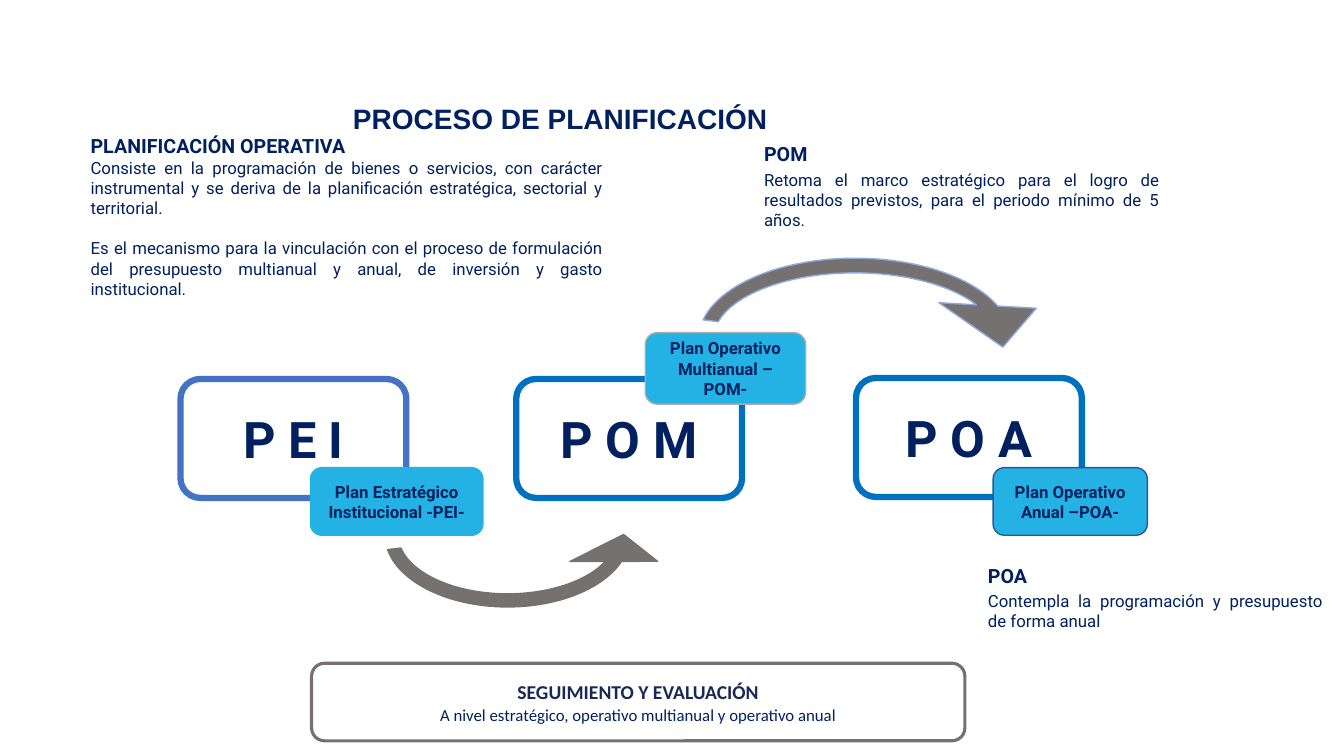
"""Build the planning process slide."""
from dataclasses import dataclass

from pptx import Presentation
from pptx.dml.color import RGBColor
from pptx.enum.shapes import MSO_SHAPE
from pptx.enum.text import MSO_ANCHOR, PP_ALIGN
from pptx.shapes.autoshape import Shape
from pptx.slide import Slide
from pptx.text.text import _Paragraph
from pptx.util import Inches, Pt

ROUNDED, ARC_ARROW = MSO_SHAPE.ROUNDED_RECTANGLE, MSO_SHAPE.CIRCULAR_ARROW
MIDDLE = MSO_ANCHOR.MIDDLE
LEFT, CENTER, JUSTIFY = PP_ALIGN.LEFT, PP_ALIGN.CENTER, PP_ALIGN.JUSTIFY
COLORS = {
    "navy": "002060", "ink": "192854", "white": "FFFFFF", "cyan": "23B2E3",
    "indigo": "4472C4", "blue": "0070C0", "silver": "AFABAB",
    "royal": "2F5597", "gray": "767171", "sky": "8FAADC",
}
Box = tuple[float, float, float, float]


@dataclass
class Line:
    text: str
    size: float = 12
    bold: bool = False
    before: float = 0
    font: str = "Roboto"
    color: str = "navy"


@dataclass
class Stage:
    acronym: str
    box: Box
    border: str
    plan: str
    plan_box: Box
    plan_border: str


@dataclass
class Arrow:
    box: Box
    head_angle: float
    border: str
    mirrored: bool = False


@dataclass
class Note:
    box: Box
    lines: list[Line]


STAGES = [
    Stage("P E I", (1.79, 3.76, 2.24, 1.18), "indigo",
          "Plan Estratégico Institucional -PEI-", (3.08, 4.64, 1.71, 0.67), "cyan"),
    Stage("P O M", (5.12, 3.76, 2.24, 1.18), "blue",
          "Plan Operativo Multianual –POM-", (6.4, 3.3, 1.59, 0.71), "silver"),
    Stage("P O A", (8.49, 3.75, 2.24, 1.18), "blue",
          "Plan Operativo Anual –POA-", (9.85, 4.64, 1.53, 0.67), "royal"),
]
ARROWS = [
    Arrow((6.52, 2.15, 3.92, 2.42), 10.41, "sky"),
    Arrow((3.45, 4.22, 3.17, 2.17), 8.52, "gray", mirrored=True),
]
NOTES = [
    Note((0.8, 1.28, 5.28, 1.55), [
        Line("PLANIFICACIÓN OPERATIVA", 14, True),
        Line("Consiste en la programación de bienes o servicios, con carácter "
             "instrumental y se deriva de la planificación estratégica, "
             "sectorial y territorial."),
        Line("Es el mecanismo para la vinculación con el proceso de formulación "
             "del presupuesto multianual y anual, de inversión y gasto "
             "institucional.", before=14.4),
    ]),
    Note((7.48, 1.36, 4.12, 0.84), [
        Line("POM", 14, True),
        Line("Retoma el marco estratégico para el logro de resultados previstos, "
             "para el periodo mínimo de 5 años.", before=3),
    ]),
    Note((9.7, 5.55, 3.52, 0.77), [
        Line("POA", 14, True),
        Line("Contempla la programación y presupuesto de forma anual", before=2),
    ]),
]
FOLLOW_UP = [
    Line("SEGUIMIENTO Y EVALUACIÓN", 14, True, font="Calibri", color="ink"),
    Line("A nivel estratégico, operativo multianual y operativo anual",
         before=1, font="Calibri"),
]


def rgb(name: str) -> RGBColor:
    """Return the named colour."""
    return RGBColor.from_string(COLORS[name])


def format_line(paragraph: _Paragraph, line: Line, align: PP_ALIGN) -> None:
    """Write one styled line into a paragraph."""
    paragraph.text = line.text
    paragraph.alignment = align
    paragraph.space_before = Pt(line.before)
    for run in paragraph.runs:
        run.font.name, run.font.size = line.font, Pt(line.size)
        run.font.bold = line.bold
        run.font.color.rgb = rgb(line.color)


def write(shape: Shape, lines: list[Line], align: PP_ALIGN) -> None:
    """Fill a shape with wrapped lines."""
    frame = shape.text_frame
    frame.word_wrap = True
    for index, line in enumerate(lines):
        paragraph = frame.add_paragraph() if index else frame.paragraphs[0]
        format_line(paragraph, line, align)


def add_figure(slide: Slide, kind: MSO_SHAPE, box: Box, fill: str,
               border: str, width: float) -> Shape:
    """Add a filled and outlined preset shape."""
    figure = slide.shapes.add_shape(kind, *map(Inches, box))
    figure.shadow.inherit = False
    figure.fill.solid()
    figure.fill.fore_color.rgb = rgb(fill)
    figure.line.color.rgb = rgb(border)
    figure.line.width = Pt(width)
    return figure


def add_panel(slide: Slide, box: Box, fill: str, border: str, width: float,
              lines: list[Line]) -> None:
    """Add a rounded panel with centred text."""
    panel = add_figure(slide, ROUNDED, box, fill, border, width)
    panel.text_frame.vertical_anchor = MIDDLE
    write(panel, lines, CENTER)


def add_stage(slide: Slide, stage: Stage) -> None:
    """Add a stage with its overlapping plan label."""
    add_panel(slide, stage.box, "white", stage.border, 4.5,
              [Line(stage.acronym, 36, True)])
    add_panel(slide, stage.plan_box, "cyan", stage.plan_border, 1,
              [Line(stage.plan, bold=True)])


def add_arrow(slide: Slide, arrow: Arrow) -> None:
    """Add a curved arrow between stages."""
    curve = add_figure(slide, ARC_ARROW, arrow.box, "gray", arrow.border, 1)
    angles = (0.06, arrow.head_angle, 207.56, 112.24, 0.2)
    for index, value in enumerate(angles):
        curve.adjustments[index] = value
    if arrow.mirrored:
        curve.rotation = 180
        curve.element.spPr.xfrm.set("flipH", "1")


def add_note(slide: Slide, note: Note) -> None:
    """Add a justified explanatory text."""
    write(slide.shapes.add_textbox(*map(Inches, note.box)), note.lines, JUSTIFY)


def set_title(slide: Slide) -> None:
    """Place and format the slide title."""
    title = slide.shapes.title
    title.left, title.top = Inches(3.45), Inches(0.98)
    title.width, title.height = Inches(4.35), Inches(0.38)
    frame = title.text_frame
    frame.margin_left = frame.margin_right = Inches(0.05)
    frame.margin_top = frame.margin_bottom = 0
    frame.vertical_anchor = MIDDLE
    write(title, [Line("PROCESO DE PLANIFICACIÓN", 20, True, font="Arial")], LEFT)


def main() -> None:
    """Create and save the presentation."""
    deck = Presentation()
    deck.slide_width, deck.slide_height = Inches(13.33), Inches(7.5)
    slide = deck.slides.add_slide(deck.slide_layouts[5])
    set_title(slide)
    for stage in STAGES:
        add_stage(slide, stage)
    for arrow in ARROWS:
        add_arrow(slide, arrow)
    for note in NOTES:
        add_note(slide, note)
    add_panel(slide, (3.09, 6.58, 6.48, 0.77), "white", "gray", 2.25, FOLLOW_UP)
    deck.save("out.pptx")


if __name__ == "__main__":
    main()
